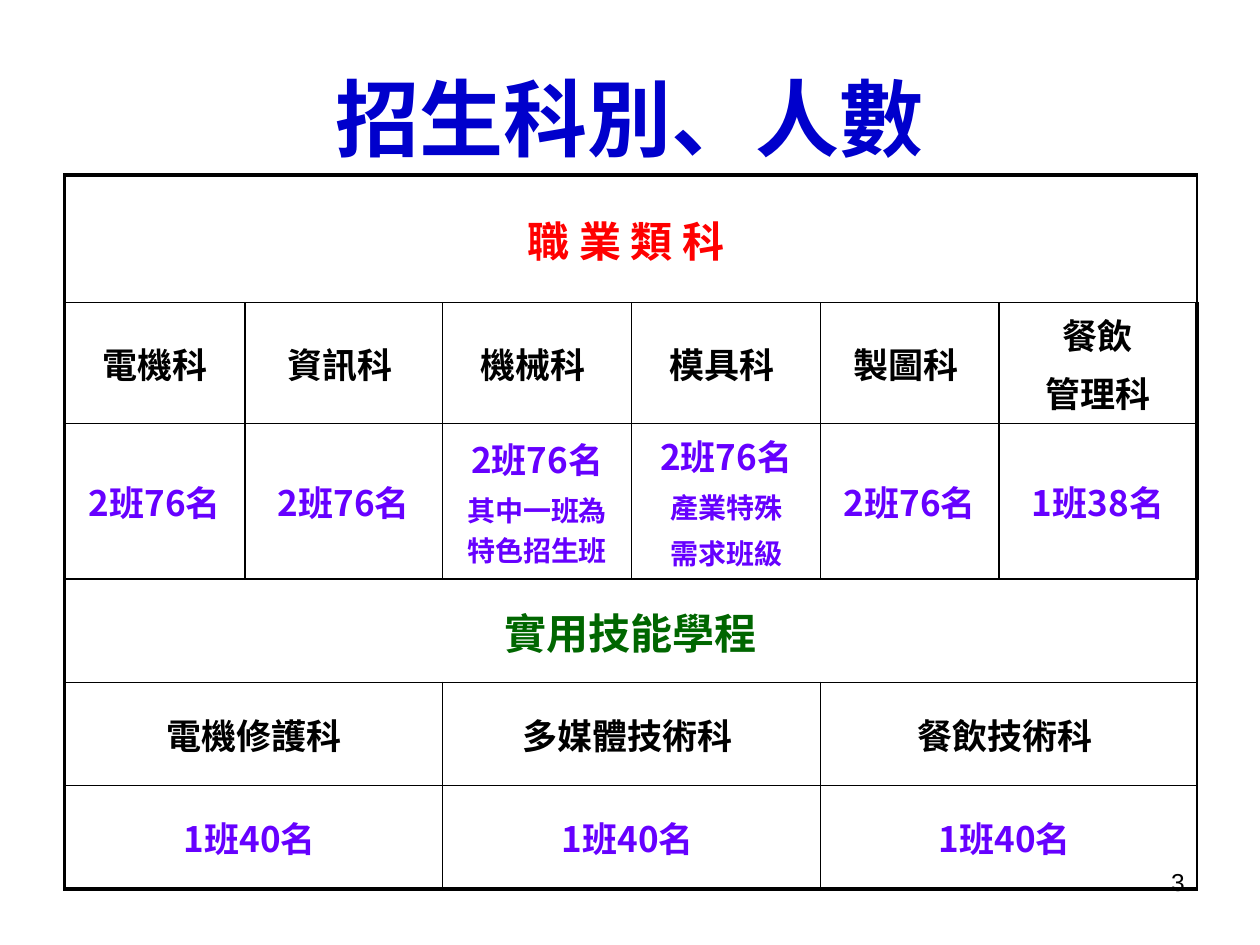
from pptx import Presentation
from pptx.dml.color import RGBColor
from pptx.enum.text import MSO_ANCHOR as Anchor, PP_ALIGN as Align
from pptx.oxml.ns import qn
from pptx.util import Pt
from lxml.etree import SubElement

CJK = "Noto Sans CJK SC"
BLACK, BLUE, RED, GREEN, PURPLE = "000000", "0000CC", "FF0000", "006600", "6600FF"
COL_WIDTHS = [103, 113, 108, 108, 102, 113]
ROW_HEIGHTS = [73, 69, 89, 59, 59, 59]

# Each row: cells spread evenly over the columns, text size, colour.
# A cell is a list of lines; lines after a quota are smaller notes.
ROWS = [
    ([["職 業 類 科 "]], 24, RED),
    ([["電機科"], ["資訊科 "], ["機械科 "], ["模具科 "], ["製圖科 "],
      ["餐飲", "管理科"]], 20, BLACK),
    ([["2班76名"], ["2班76名"], ["2班76名", "其中一班為特色招生班"],
      ["2班76名", "產業特殊", "需求班級"], ["2班76名"], ["1班38名"]], 20, PURPLE),
    ([["實用技能學程"]], 24, GREEN),
    ([["電機修護科"], ["多媒體技術科 "], ["餐飲技術科 "]], 20, BLACK),
    ([["1班40名 "]] * 3, 20, PURPLE),
]
NOTE_SIZE = 16


def rgb(value):
    return RGBColor.from_string(value)


def write(p, text, size, color, font=CJK, bold=True, align=Align.CENTER):
    p.add_run().text = text
    p.alignment = align
    f = p.font
    f.name, f.size, f.bold = font, Pt(size), bold
    f.color.rgb = rgb(color)
    # East Asian characters take their own typeface
    props = p._p.get_or_add_pPr().find(qn("a:defRPr"))
    SubElement(props, qn("a:ea"), typeface=font)


def add_text(s, box, text, size, color, anchor=Anchor.TOP, **style):
    tf = s.shapes.add_textbox(*(Pt(v) for v in box)).text_frame
    tf.word_wrap = True
    tf.vertical_anchor = anchor
    write(tf.paragraphs[0], text, size, color, **style)


def set_borders(cell, widths):
    props = cell._tc.get_or_add_tcPr()
    for i, (side, width) in enumerate(widths.items()):
        ln = props.makeelement(qn(f"a:ln{side}"), {"w": str(Pt(width))})
        fill = SubElement(ln, qn("a:solidFill"))
        SubElement(fill, qn("a:srgbClr"), val=BLACK)
        props.insert(i, ln)


def fill_cell(cell, lines, size, color):
    cell.vertical_anchor = Anchor.MIDDLE
    tf = cell.text_frame
    for i, line in enumerate(lines):
        p = tf.add_paragraph() if i else tf.paragraphs[0]
        line_size = NOTE_SIZE if i and color == PURPLE else size
        write(p, line, line_size, color)
        if i:
            p.space_before = Pt(0.2 * line_size)


def add_quota_table(s, left, top):
    n_rows, n_cols = len(ROWS), len(COL_WIDTHS)
    table = s.shapes.add_table(n_rows, n_cols, Pt(left), Pt(top),
                               Pt(sum(COL_WIDTHS)), Pt(sum(ROW_HEIGHTS))).table
    table.first_row = table.horz_banding = False
    for col, width in zip(table.columns, COL_WIDTHS):
        col.width = Pt(width)
    for row, height in zip(table.rows, ROW_HEIGHTS):
        row.height = Pt(height)

    # Thick outer frame, thin inner lines
    for r in range(n_rows):
        for c in range(n_cols):
            cell = table.cell(r, c)
            cell.fill.background()
            outer = {"L": c == 0, "R": c == n_cols - 1,
                     "T": r == 0, "B": r == n_rows - 1}
            set_borders(cell, {k: 2.25 if v else 1 for k, v in outer.items()})

    # Merged cells and their text
    for r, (cells, size, color) in enumerate(ROWS):
        span = n_cols // len(cells)
        for i, lines in enumerate(cells):
            cell = table.cell(r, i * span)
            if span > 1:
                cell.merge(table.cell(r, (i + 1) * span - 1))
            fill_cell(cell, lines, size, color)


def main():
    prs = Presentation()
    prs.slide_width, prs.slide_height = Pt(720), Pt(540)
    s = prs.slides.add_slide(prs.slide_layouts[6])
    # Page number
    add_text(s, (516, 492, 168, 37.5), "3", 14, BLACK,
             font="Arial", bold=False, align=Align.RIGHT)
    # Title
    add_text(s, (36, 21.6, 648, 90), "招生科別、人數", 48, BLUE, anchor=Anchor.MIDDLE)
    # Departments and places
    add_quota_table(s, 37, 100)
    prs.save("out.pptx")


if __name__ == "__main__":
    main()
